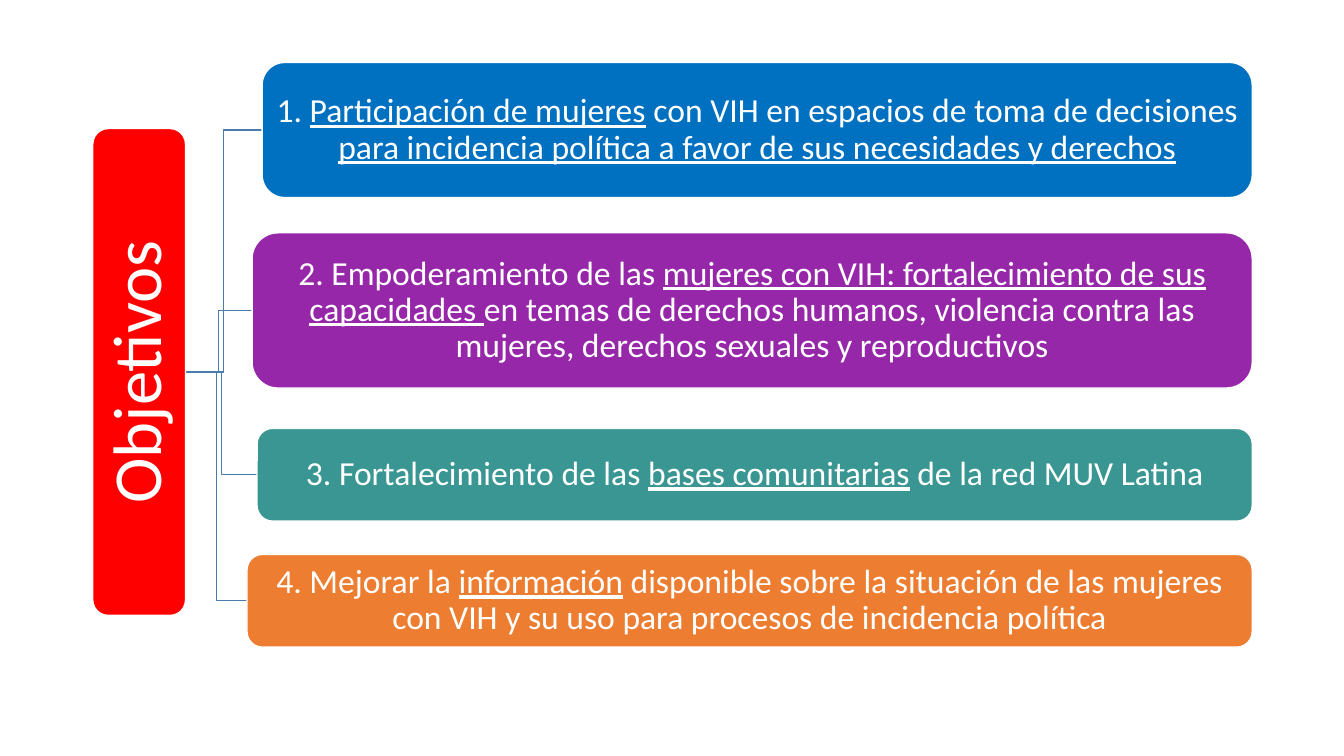
from dataclasses import dataclass

import pptx
import pptx.dml.color
import pptx.enum.shapes
import pptx.enum.text
import pptx.util

Inches = pptx.util.Inches
Pt = pptx.util.Pt
RGBColor = pptx.dml.color.RGBColor

WHITE = RGBColor(0xFF, 0xFF, 0xFF)
RED = RGBColor(0xFF, 0x00, 0x00)
BLUE = RGBColor(0x00, 0x70, 0xC0)
PURPLE = RGBColor(0x96, 0x27, 0xA9)
TEAL = RGBColor(0x3A, 0x96, 0x92)
ORANGE = RGBColor(0xED, 0x7D, 0x31)
BRANCH_BLUE = RGBColor(0x49, 0x7C, 0xAB)

TITLE_LENGTH = 4.83
TITLE_THICKNESS = 0.92
TITLE_CENTER = 1.38
TRUNK_X = 1.84
TRUNK_Y = 3.69
GOALS_RIGHT = 12.42


@dataclass(frozen=True)
class Span:
    text: str
    underlined: bool = False


@dataclass(frozen=True)
class Goal:
    left: float
    top: float
    height: float
    color: RGBColor
    spans: tuple[Span, ...]


GOALS = (
    Goal(2.6, 0.62, 1.34, BLUE, (
        Span("1. "),
        Span("Participación de mujeres", True),
        Span(" con VIH en espacios de toma de decisiones "),
        Span("para incidencia política a favor de sus necesidades y derechos", True),
    )),
    Goal(2.5, 2.31, 1.54, PURPLE, (
        Span("2. Empoderamiento de las "),
        Span("mujeres con VIH: fortalecimiento de sus capacidades ", True),
        Span("en temas de derechos humanos, violencia contra las mujeres, "
             "derechos sexuales y reproductivos"),
    )),
    Goal(2.55, 4.25, 0.92, TEAL, (
        Span("3. Fortalecimiento de las "),
        Span("bases comunitarias", True),
        Span(" de la red MUV Latina"),
    )),
    Goal(2.45, 5.5, 0.92, ORANGE, (
        Span("4. Mejorar la "),
        Span("información", True),
        Span(" disponible sobre la situación de las mujeres con VIH "
             "y su uso para procesos de incidencia política"),
    )),
)


def draw_branch(page: pptx.slide.Slide, goal: Goal) -> None:
    """Draw the elbow line from the title bar to a goal."""
    middle_x = (TRUNK_X + goal.left) / 2
    goal_y = goal.top + goal.height / 2
    corners = [(middle_x, TRUNK_Y), (middle_x, goal_y), (goal.left, goal_y)]
    builder = page.shapes.build_freeform(Inches(TRUNK_X), Inches(TRUNK_Y))
    builder.add_line_segments([(Inches(x), Inches(y)) for x, y in corners], close=False)
    branch = builder.convert_to_shape()
    branch.shadow.inherit = False
    branch.fill.background()
    branch.line.color.rgb = BRANCH_BLUE
    branch.line.width = Pt(1)


def draw_box(page: pptx.slide.Slide, left: float, top: float, width: float, height: float,
             color: RGBColor, spans: tuple[Span, ...], size: float, inset: float,
             rotation: float = 0) -> None:
    box = page.shapes.add_shape(
        pptx.enum.shapes.MSO_SHAPE.ROUNDED_RECTANGLE,
        Inches(left), Inches(top), Inches(width), Inches(height))
    box.rotation = rotation
    box.shadow.inherit = False
    box.fill.solid()
    box.fill.fore_color.rgb = color
    box.line.color.rgb = WHITE
    box.line.width = Pt(1)

    frame = box.text_frame
    frame.word_wrap = True
    frame.vertical_anchor = pptx.enum.text.MSO_ANCHOR.MIDDLE
    frame.margin_left = frame.margin_right = Inches(inset)
    frame.margin_top = frame.margin_bottom = Inches(inset)
    para = frame.paragraphs[0]
    para.alignment = pptx.enum.text.PP_ALIGN.CENTER
    para.line_spacing = 0.9
    para.font.name = "Calibri"
    para.font.size = Pt(size)
    para.font.color.rgb = WHITE
    for span in spans:
        run = para.add_run()
        run.text = span.text
        if span.underlined:
            run.font.underline = True


def main() -> None:
    deck = pptx.Presentation()
    deck.slide_width = Inches(13.33)
    deck.slide_height = Inches(7.5)
    page = deck.slides.add_slide(deck.slide_layouts[6])

    for goal in reversed(GOALS):
        draw_branch(page, goal)
    draw_box(page, TITLE_CENTER - TITLE_LENGTH / 2, TRUNK_Y - TITLE_THICKNESS / 2,
             TITLE_LENGTH, TITLE_THICKNESS, RED, (Span("Objetivos"),),
             size=49, inset=0.03, rotation=270)
    for goal in GOALS:
        draw_box(page, goal.left, goal.top, GOALS_RIGHT - goal.left, goal.height,
                 goal.color, goal.spans, size=24, inset=0.02)

    deck.save("out.pptx")


if __name__ == "__main__":
    main()
